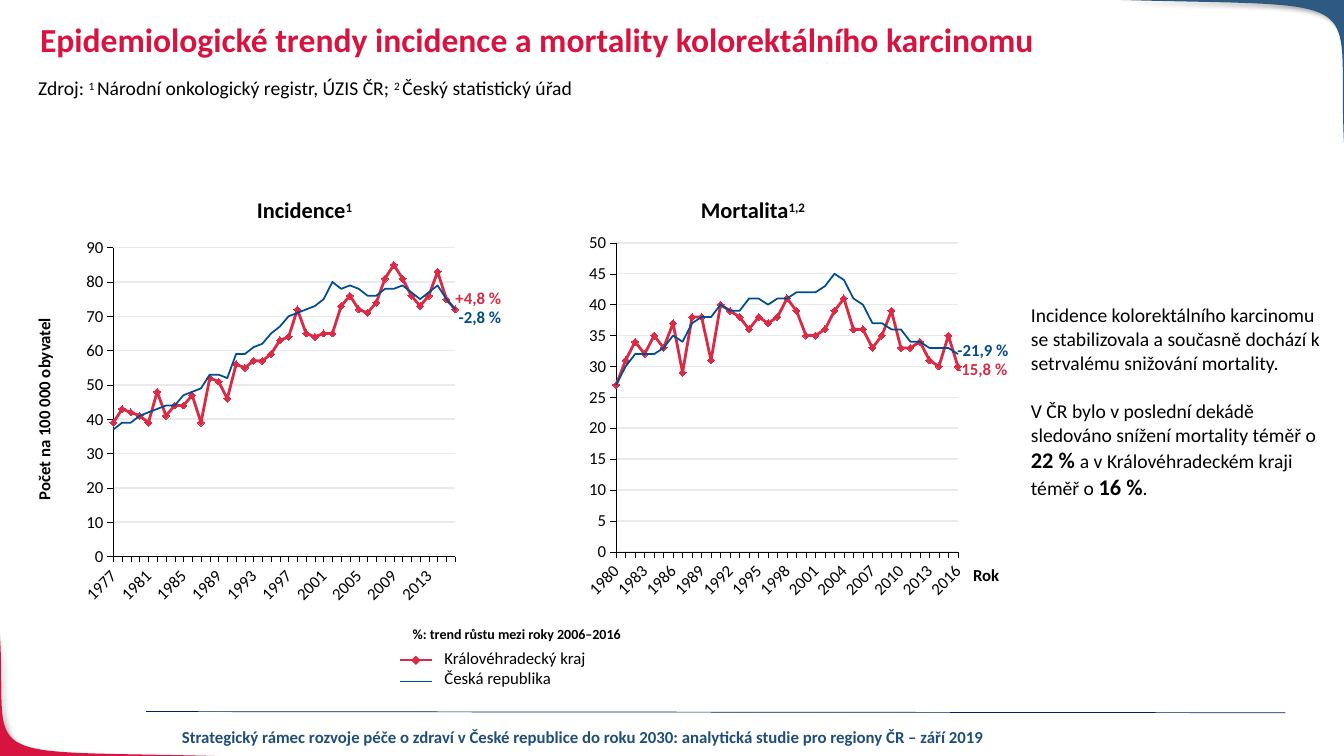
from lxml import etree
from pptx import Presentation
from pptx import util as u
from pptx.chart.data import CategoryChartData
from pptx.dml.color import RGBColor
from pptx.enum import chart as ch, shapes, text
from pptx.oxml import parse_xml
from pptx.oxml.ns import nsdecls, qn

Cm, Pt = u.Cm, u.Pt
FONT = "Calibri"
COLORS = {"red": "DA2B46", "blue": "004E8F", "title": "D71440", "corner": "2E5980",
          "footer": "1F4E79", "rule": "002060", "grid": "EAEAEA", "black": "000000"}
WIDTH, HEIGHT = 33.87, 19.05

INCIDENCE_REGION = [39, 43, 42, 41, 39, 48, 41, 44, 44, 47, 39, 52, 51, 46, 56, 55, 57, 57, 59, 63,
                    64, 72, 65, 64, 65, 65, 73, 76, 72, 71, 74, 81, 85, 81, 76, 73, 76, 83, 75, 72]
INCIDENCE_COUNTRY = [37, 39, 39, 41, 42, 43, 44, 44, 47, 48, 49, 53, 53, 52, 59, 59, 61, 62, 65, 67,
                     70, 71, 72, 73, 75, 80, 78, 79, 78, 76, 76, 78, 78, 79, 77, 75, 77, 79, 75, 72]
MORTALITY_REGION = [27, 31, 34, 32, 35, 33, 37, 29, 38, 38, 31, 40, 39, 38, 36, 38, 37, 38, 41,
                    39, 35, 35, 36, 39, 41, 36, 36, 33, 35, 39, 33, 33, 34, 31, 30, 35, 30]
MORTALITY_COUNTRY = [27, 30, 32, 32, 32, 33, 35, 34, 37, 38, 38, 40, 39, 39, 41, 41, 40, 41, 41,
                     42, 42, 42, 43, 45, 44, 41, 40, 37, 37, 36, 36, 34, 34, 33, 33, 33, 32]


def rgb(name):
    return RGBColor.from_string(COLORS[name])


def add_text(s, box, paras, size, color="black", bold=False, align="LEFT", anchor="TOP",
             inset=True, leading=None, gap=0):
    """Each paragraph is a string or a list of (text, style) runs; style is "", "sup" or "big"."""
    tb = s.shapes.add_textbox(*map(Cm, box))
    tf = tb.text_frame
    tf.word_wrap = True
    tf.vertical_anchor = getattr(text.MSO_ANCHOR, anchor)
    if not inset:
        tf.margin_left = tf.margin_right = tf.margin_top = tf.margin_bottom = 0
    for i, runs in enumerate(paras):
        p = tf.add_paragraph() if i else tf.paragraphs[0]
        p.alignment = getattr(text.PP_ALIGN, align)
        p.line_spacing = leading
        if i and gap:
            p.space_before = Pt(gap)
        p.font.name, p.font.size, p.font.bold = FONT, Pt(size), bold
        p.font.color.rgb = rgb(color)
        for words, style in [(runs, "")] if isinstance(runs, str) else runs:
            r = p.add_run()
            r.text = words
            if style == "sup":
                r._r.get_or_add_rPr().set("baseline", "30000")
            elif style == "big":
                r.font.size, r.font.bold = Pt(size + 2), True
    return tb


def add_line(s, x1, y1, x2, y2, color, width):
    line = s.shapes.add_connector(shapes.MSO_CONNECTOR.STRAIGHT, Cm(x1), Cm(y1), Cm(x2), Cm(y2))
    line.line.color.rgb, line.line.width = rgb(color), Pt(width)
    etree.SubElement(line._element.spPr, qn("a:effectLst"))


def corner(s, curve, tip, color):
    """Fill the area between a cubic curve and the slide corner, with a soft shadow."""
    steps = 40
    points = []
    for i in range(steps + 1):
        t = i / steps
        weights = ((1 - t) ** 3, 3 * t * (1 - t) ** 2, 3 * t ** 2 * (1 - t), t ** 3)
        points.append([Cm(sum(w * c[axis] for w, c in zip(weights, curve))) for axis in (0, 1)])
    points.append([Cm(v) for v in tip])
    builder = s.shapes.build_freeform(*points[0])
    builder.add_line_segments(points[1:], close=True)
    sp = builder.convert_to_shape()
    sp.fill.solid()
    sp.fill.fore_color.rgb = rgb(color)
    sp.line.fill.background()
    sp._element.spPr.append(parse_xml(
        f'<a:effectLst {nsdecls("a")}><a:outerShdw blurRad="50800" dist="38100" dir="2700000">'
        '<a:srgbClr val="000000"><a:alpha val="40000"/></a:srgbClr></a:outerShdw></a:effectLst>'))


def frame(s):
    """Corner decorations and footer."""
    corner(s, [(5.41, HEIGHT), (-0.86, 18.9), (0.2, 19.28), (0, 16)], (0, HEIGHT), "title")
    corner(s, [(28.22, 0), (34.8, 0.18), (33.68, -0.25), (WIDTH, 3.61)], (WIDTH, 0), "corner")
    add_line(s, 3.68, 17.93, 32.39, 17.96, "rule", 0.5)
    add_text(s, (3.99, 18.19, 21.41, 0.76),
             ["Strategický rámec rozvoje péče o zdraví v České republice do roku 2030: "
              "analytická studie pro regiony ČR – září 2019"],
             12, "footer", True, "CENTER")


def style_axis(axis):
    axis.major_tick_mark = ch.XL_TICK_MARK.OUTSIDE
    axis.minor_tick_mark = ch.XL_TICK_MARK.NONE
    axis.tick_labels.font.size = Pt(12)
    axis.format.line.color.rgb, axis.format.line.width = rgb("black"), Pt(0.25)


def trend_chart(s, box, first_year, region, country, top, step, label_every):
    data = CategoryChartData()
    data.categories = [str(first_year + i) for i in range(len(region))]
    data.add_series("Královéhradecký kraj", region)
    data.add_series("Česká republika", country)
    chart = s.shapes.add_chart(ch.XL_CHART_TYPE.LINE_MARKERS, *map(Cm, box), data).chart
    chart.has_legend = chart.has_title = False
    chart.font.name, chart.font.size = FONT, Pt(8)
    chart.font.color.rgb = rgb("black")

    years, rate = chart.category_axis, chart.value_axis
    style_axis(years)
    style_axis(rate)
    years.has_major_gridlines = False
    years._element.txPr.find(qn("a:bodyPr")).set("rot", "-2700000")
    skip = parse_xml(f'<c:tickLblSkip {nsdecls("c")} val="{label_every}"/>')
    years._element.find(qn("c:noMultiLvlLbl")).addprevious(skip)
    rate.minimum_scale, rate.maximum_scale, rate.major_unit = 0, top, step
    rate.tick_labels.number_format, rate.tick_labels.number_format_is_linked = "General", False
    rate.major_gridlines.format.line.color.rgb = rgb("grid")
    rate.major_gridlines.format.line.width = Pt(1)
    rate._element.find(qn("c:crosses")).addnext(
        parse_xml(f'<c:crossBetween {nsdecls("c")} val="midCat"/>'))

    plot = chart.plots[0]
    plot.vary_by_categories = False
    for series, color, width in zip(plot.series, ("red", "blue"), (2, 1.25)):
        series.smooth = False
        series.format.line.color.rgb, series.format.line.width = rgb(color), Pt(width)
        series.marker.style = ch.XL_MARKER_STYLE.NONE
    marker = plot.series[0].marker
    marker.style, marker.size = ch.XL_MARKER_STYLE.DIAMOND, 5
    marker.format.fill.solid()
    marker.format.fill.fore_color.rgb = marker.format.line.color.rgb = rgb("red")

    area = chart._chartSpace.chart.plotArea
    for old in area.findall(qn("c:layout")):
        area.remove(old)
    sizes = "".join(f'<c:{k} val="{v}"/>' for k, v in
                    (("x", 0.109), ("y", 0.065), ("w", 0.872), ("h", 0.8)))
    area.insert(0, parse_xml(
        f'<c:layout {nsdecls("c")}><c:manualLayout><c:layoutTarget val="inner"/>'
        f'<c:xMode val="edge"/><c:yMode val="edge"/>{sizes}</c:manualLayout></c:layout>'))


def trend_panel(s, box, heading, heading_dx, trends, **series):
    """Chart in the box, its heading above and the growth labels at the line ends."""
    x, y, w, h = box
    trend_chart(s, box, **series)
    for label, color, dx, dy in trends:
        add_text(s, (x + dx, y + dy, 1.63, 0.51), [label], 12, color, True,
                 anchor="MIDDLE", inset=False)
    add_text(s, (x + heading_dx, 4.83, 9.55, 0.94), [heading], 16, bold=True, align="CENTER")


def legend(s, box):
    x, y, w, h = box
    add_line(s, x, y + 0.31, x + 0.81, y + 0.31, "red", 1.5)
    sp = s.shapes.add_shape(shapes.MSO_SHAPE.DIAMOND, Cm(x + 0.3), Cm(y + 0.21), Cm(0.2), Cm(0.2))
    sp.shadow.inherit = False
    sp.fill.solid()
    sp.fill.fore_color.rgb = sp.line.color.rgb = rgb("red")
    sp.line.width = Pt(0.75)
    add_line(s, x, y + 0.84, x + 0.81, y + 0.84, "blue", 0.75)
    add_text(s, (x + 1.12, y, w - 1.12, h), ["Královéhradecký kraj", "Česká republika"],
             12, inset=False)


def header(s, box):
    x, y, w, h = box
    add_text(s, (x, y, w, 1.75),
             ["Epidemiologické trendy incidence a mortality kolorektálního karcinomu"],
             24, "title", True, leading=0.9)
    add_text(s, (x - 0.05, y + 1.34, w / 2, 0.86),
             [[("Zdroj: ", ""), ("1 ", "sup"), ("Národní onkologický registr, ÚZIS ČR; ", ""),
               ("2 ", "sup"), ("Český statistický úřad", "")]], 14)


def commentary(s, box):
    add_text(s, box, [
        "Incidence kolorektálního karcinomu se stabilizovala a současně dochází "
        "k setrvalému snižování mortality.",
        [("V ČR bylo v poslední dekádě sledováno snížení mortality téměř o ", ""),
         ("22 % ", "big"), ("a v Královéhradeckém kraji téměř o ", ""),
         ("16 %", "big"), (".", "")]], 14, gap=18)


def main():
    prs = Presentation()
    prs.slide_width, prs.slide_height = Cm(WIDTH), Cm(HEIGHT)
    s = prs.slides.add_slide(prs.slide_layouts[6])
    frame(s)
    header(s, (0.76, 0.46, 30.58, 2.2))
    trend_panel(s, (1.78, 5.61, 9.88, 9.73), [("Incidence", ""), ("1", "sup")], 1.12,
                [("-2,8 %", "blue", 9.78, 2.13), ("+4,8 %", "red", 9.7, 1.65)],
                first_year=1977, region=INCIDENCE_REGION, country=INCIDENCE_COUNTRY,
                top=90, step=10, label_every=4)
    trend_panel(s, (14.45, 5.49, 9.88, 9.73), [("Mortalita", ""), ("1,2", "sup")], -0.25,
                [("-21,9 %", "blue", 9.68, 3.07), ("-15,8 %", "red", 9.65, 3.55)],
                first_year=1980, region=MORTALITY_REGION, country=MORTALITY_COUNTRY,
                top=50, step=5, label_every=3)
    unit = add_text(s, (-2.97, 9.93, 8.15, 0.76), ["Počet na 100 000 obyvatel"],
                    12, bold=True, align="CENTER")
    unit.rotation = 270
    add_text(s, (24.26, 14.22, 1.19, 0.51), ["Rok"], 12, bold=True, align="CENTER", inset=False)
    add_text(s, (9.12, 15.6, 7.8, 0.79), ["%: trend růstu mezi roky 2006–2016"],
             10, bold=True, align="CENTER", anchor="MIDDLE", leading=0.85)
    legend(s, (10.08, 16.33, 6.25, 1.02))
    commentary(s, (25.73, 7.52, 7.82, 5.28))
    prs.save("out.pptx")


if __name__ == "__main__":
    main()
